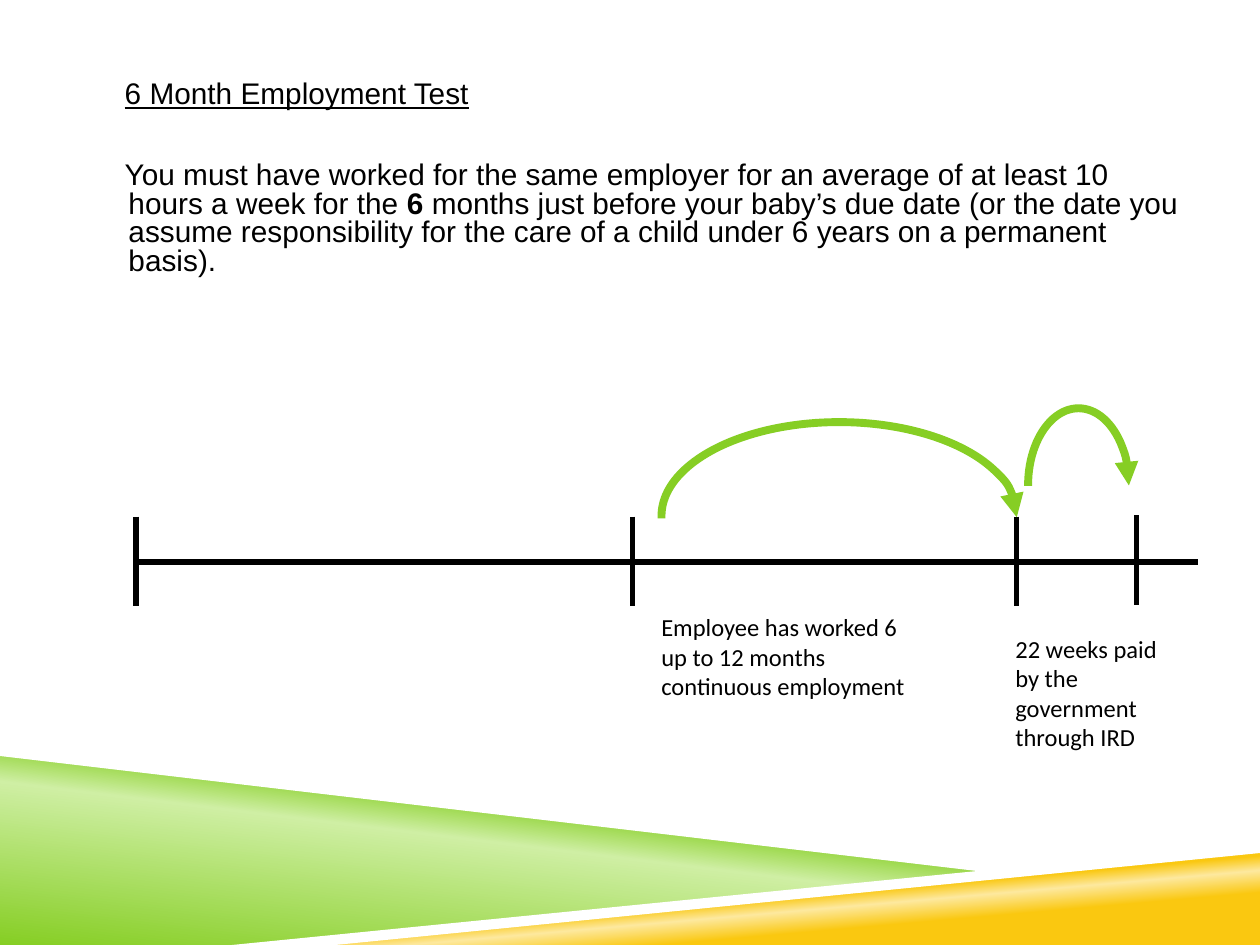
from lxml import etree
from pptx import Presentation
from pptx.dml.color import RGBColor
from pptx.enum.shapes import MSO_CONNECTOR, MSO_SHAPE
from pptx.enum.text import MSO_AUTO_SIZE
from pptx.oxml import parse_xml
from pptx.oxml.ns import nsdecls, qn
from pptx.util import Inches, Pt

ARC = MSO_SHAPE.ARC
STRAIGHT = MSO_CONNECTOR.STRAIGHT
NO_AUTOFIT = MSO_AUTO_SIZE.NONE
GROW = MSO_AUTO_SIZE.SHAPE_TO_FIT_TEXT

BLACK = RGBColor(0x00, 0x00, 0x00)
WHITE = RGBColor(0xFF, 0xFF, 0xFF)
GREEN = RGBColor(0x86, 0xCE, 0x24)
PALE_GREEN = RGBColor(0xCF, 0xEF, 0xA4)
YELLOW = RGBColor(0xFA, 0xC8, 0x10)
PALE_YELLOW = RGBColor(0xFD, 0xE9, 0x9F)


class SlideBuilder:
    """Draws styled elements on one slide."""

    body_font = "Arial"
    label_font = "Calibri"

    def __init__(self, slide):
        self.slide = slide
        self.shapes = slide.shapes

    def format_run(self, run, name, size):
        run.font.name = name
        run.font.size = Pt(size)
        run.font.color.rgb = BLACK

    def polygon(self, points, color):
        corners = [(Inches(x), Inches(y)) for x, y in points]
        builder = self.shapes.build_freeform(*corners[0])
        builder.add_line_segments(corners[1:], close=True)
        shape = builder.convert_to_shape()
        shape.shadow.inherit = False
        shape.line.fill.background()
        shape.fill.solid()
        shape.fill.fore_color.rgb = color
        return shape

    def gradient_polygon(self, points, stops, angle):
        shape = self.polygon(points, WHITE)
        stop_xml = "".join(
            f'<a:gs pos="{position * 1000}"><a:srgbClr val="{color}"/></a:gs>'
            for position, color in stops
        )
        gradient = parse_xml(
            f'<a:gradFill {nsdecls("a")} rotWithShape="1"><a:gsLst>{stop_xml}</a:gsLst>'
            f'<a:lin ang="{angle * 60000}" scaled="0"/></a:gradFill>'
        )
        properties = shape.element.spPr
        properties.replace(properties.find(qn("a:solidFill")), gradient)

    def body(self, left, top, width, height, paragraphs):
        shape = self.slide.placeholders[1]
        shape.left, shape.top = Inches(left), Inches(top)
        shape.width, shape.height = Inches(width), Inches(height)
        frame = shape.text_frame
        frame.word_wrap = True
        frame.auto_size = NO_AUTOFIT
        frame.margin_left = frame.margin_right = 0
        for index, (space_before, runs) in enumerate(paragraphs):
            paragraph = frame.add_paragraph() if index else frame.paragraphs[0]
            properties = paragraph._p.get_or_add_pPr()
            properties.set("marL", str(Inches(0.11)))
            properties.set("indent", str(Inches(-0.03)))
            etree.SubElement(properties, qn("a:buNone"))
            paragraph.line_spacing = 0.8
            paragraph.space_before = Pt(space_before)
            for text, bold, underline in runs:
                run = paragraph.add_run()
                run.text = text
                self.format_run(run, self.body_font, 17)
                run.font.bold = bold
                run.font.underline = underline

    def label(self, left, top, width, height, text):
        box = self.shapes.add_textbox(
            Inches(left), Inches(top), Inches(width), Inches(height)
        )
        frame = box.text_frame
        frame.word_wrap = True
        frame.auto_size = GROW
        frame.text = text
        self.format_run(frame.paragraphs[0].runs[0], self.label_font, 14)

    def line(self, x1, y1, x2, y2):
        connector = self.shapes.add_connector(
            STRAIGHT, Inches(x1), Inches(y1), Inches(x2), Inches(y2)
        )
        connector.line.color.rgb = BLACK
        connector.line.width = Pt(3)
        etree.SubElement(connector.element.spPr, qn("a:effectLst"))

    def arc_arrow(self, left, top, width, height):
        shape = self.shapes.add_shape(
            ARC, Inches(left), Inches(top), Inches(width), Inches(height)
        )
        shape.shadow.inherit = False
        shape.fill.background()
        shape.adjustments[0] = 107.53
        shape.adjustments[1] = 0.24
        shape.line.color.rgb = GREEN
        shape.line.width = Pt(4.5)
        etree.SubElement(shape.line._get_or_add_ln(), qn("a:tailEnd"), type="triangle")


def main():
    presentation = Presentation()
    presentation.slide_width, presentation.slide_height = Inches(10), Inches(7.5)
    slide = presentation.slides.add_slide(presentation.slide_layouts[1])
    title = slide.shapes.title.element
    title.getparent().remove(title)
    builder = SlideBuilder(slide)

    builder.gradient_polygon(
        [(0, 5.97), (7.92, 6.92), (2, 7.5), (0, 7.5)],
        [(0, GREEN), (52, PALE_GREEN), (66, GREEN)],
        277,
    )
    builder.gradient_polygon(
        [(1.98, 7.5), (10, 6.72), (10, 7.5)],
        [(28, YELLOW), (40, PALE_YELLOW), (48, YELLOW)],
        265,
    )
    builder.polygon([(0, 5.92), (0, 6), (7.9, 6.93), (8.32, 6.9)], WHITE)
    builder.polygon([(10, 6.69), (1.84, 7.5), (2.66, 7.5), (10, 6.77)], WHITE)

    builder.body(0.91, 0.6, 8.5, 1.81, [
        (0, [("6 Month Employment Test", False, True)]),
        (30, [
            ("You must have worked for the same employer for an average of "
             "at least 10 hours a week for the ", False, False),
            ("6", True, False),
            (" months just before your baby’s due date (or the date you assume "
             "responsibility for the care of a child under 6 years on a "
             "permanent basis).", False, False),
        ]),
    ])

    builder.line(1.08, 4.46, 9.51, 4.46)
    for x, top in [(1.08, 4.1), (5.02, 4.1), (8.07, 4.1), (9.02, 4.09)]:
        builder.line(x, top, x, top + 0.71)

    builder.arc_arrow(5.25, 3.35, 2.82, 1.49)
    builder.arc_arrow(8.16, 3.24, 0.8, 1.22)
    builder.label(5.15, 4.81, 2.27, 0.81,
                  "Employee has worked 6 up to 12 months continuous employment")
    builder.label(7.96, 4.98, 1.45, 1.28,
                  "22 weeks paid by the government through IRD")

    presentation.save("out.pptx")


if __name__ == "__main__":
    main()
